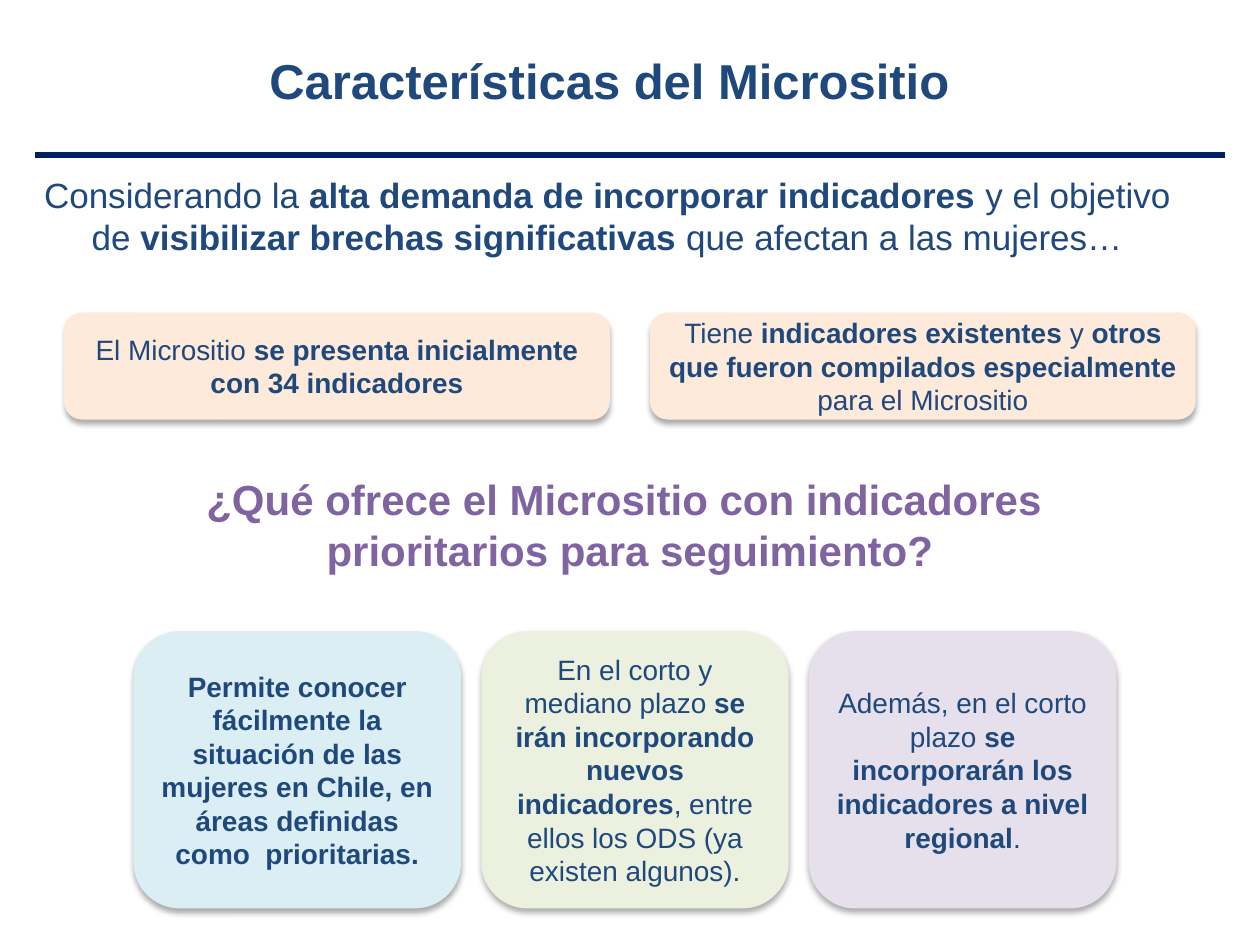
from lxml import etree
from pptx import Presentation
from pptx import util as u
from pptx.dml.color import RGBColor
from pptx.enum import shapes, text
from pptx.oxml.ns import qn

SCALE = 9144
NAVY = RGBColor(0x00, 0x20, 0x60)
BLUE = RGBColor(0x1F, 0x49, 0x7D)
PURPLE = RGBColor(0x80, 0x64, 0xA2)
PEACH = RGBColor(0xFD, 0xEA, 0xDA)
AQUA = RGBColor(0xDB, 0xEE, 0xF4)
GREEN = RGBColor(0xEB, 0xF1, 0xDE)
LILAC = RGBColor(0xE6, 0xE0, 0xEC)

FACTS = [
    "El Micrositio **se presenta inicialmente con 34 indicadores**",
    "Tiene **indicadores existentes** y **otros que fueron compilados "
    "especialmente** para el Micrositio",
]
OFFERS = [
    (260, AQUA, "**Permite conocer fácilmente la situación de las mujeres en "
                "Chile, en áreas definidas como  prioritarias.**"),
    (244, GREEN, "En el corto y mediano plazo **se irán incorporando nuevos "
                 "indicadores**, entre ellos los ODS (ya existen algunos)."),
    (244, LILAC, "Además, en el corto plazo **se incorporarán los indicadores "
                 "a nivel regional**."),
]


def px(*lengths):
    return [u.Emu(length * SCALE) for length in lengths]


def write(frame, content, *, size, color=BLUE, anchor=text.MSO_ANCHOR.TOP):
    frame.word_wrap = True
    frame.vertical_anchor = anchor
    for index, line in enumerate(content.split("\n")):
        para = frame.add_paragraph() if index else frame.paragraphs[0]
        para.alignment = text.PP_ALIGN.CENTER
        for part, words in enumerate(line.split("**")):
            if words:
                span = para.add_run()
                span.text = words
                span.font.name = "Arial"
                span.font.size = u.Pt(size)
                span.font.bold = part % 2 == 1
                span.font.color.rgb = color


def add_text(page, content, *, at, **style):
    box = page.shapes.add_textbox(*px(*at))
    write(box.text_frame, content, **style)


def add_shadow(card):
    card.shadow.inherit = False
    effects = card._element.spPr.find(qn("a:effectLst"))
    shadow = etree.SubElement(
        effects, qn("a:outerShdw"), blurRad=str(u.Pt(3.5)),
        dist=str(u.Pt(2.2)), dir="5400000", rotWithShape="0")
    tint = etree.SubElement(shadow, qn("a:srgbClr"), val="000000")
    etree.SubElement(tint, qn("a:alpha"), val="32000")


def add_card(page, content, *, at, fill):
    card = page.shapes.add_shape(
        shapes.MSO_SHAPE.ROUNDED_RECTANGLE, *px(*at))
    card.fill.solid()
    card.fill.fore_color.rgb = fill
    card.line.fill.background()
    add_shadow(card)
    write(card.text_frame, content, size=16, anchor=text.MSO_ANCHOR.MIDDLE)


def add_rule(page, *, left, right, top):
    rule = page.shapes.add_connector(
        shapes.MSO_CONNECTOR.STRAIGHT, *px(left, top, right, top))
    rule.line.color.rgb = NAVY
    rule.line.width = u.Pt(3)
    etree.SubElement(rule._element.spPr, qn("a:effectLst"))


def main():
    deck = Presentation()
    deck.slide_width, deck.slide_height = px(1000, 750)
    page = deck.slides.add_slide(deck.slide_layouts[6])

    add_text(page, "**Características del Micrositio**",
             at=(30, 35, 907, 57), size=28)
    add_rule(page, left=28, right=972, top=123)
    add_text(page, "Considerando la **alta demanda de incorporar indicadores** "
             "y el objetivo de **visibilizar brechas significativas** "
             "que afectan a las mujeres…", at=(20, 133, 924, 77), size=20)

    for column, fact in enumerate(FACTS):
        add_card(page, fact, at=(51 + column * 465, 248, 433, 85), fill=PEACH)

    add_text(page, "**¿Qué ofrece el Micrositio con indicadores **\n"
             "**prioritarios para seguimiento?**",
             at=(65, 371, 870, 91), size=24, color=PURPLE)

    left = 106
    for width, fill, offer in OFFERS:
        add_card(page, offer, at=(left, 501, width, 220), fill=fill)
        left += width + 16

    deck.save("out.pptx")


if __name__ == "__main__":
    main()
